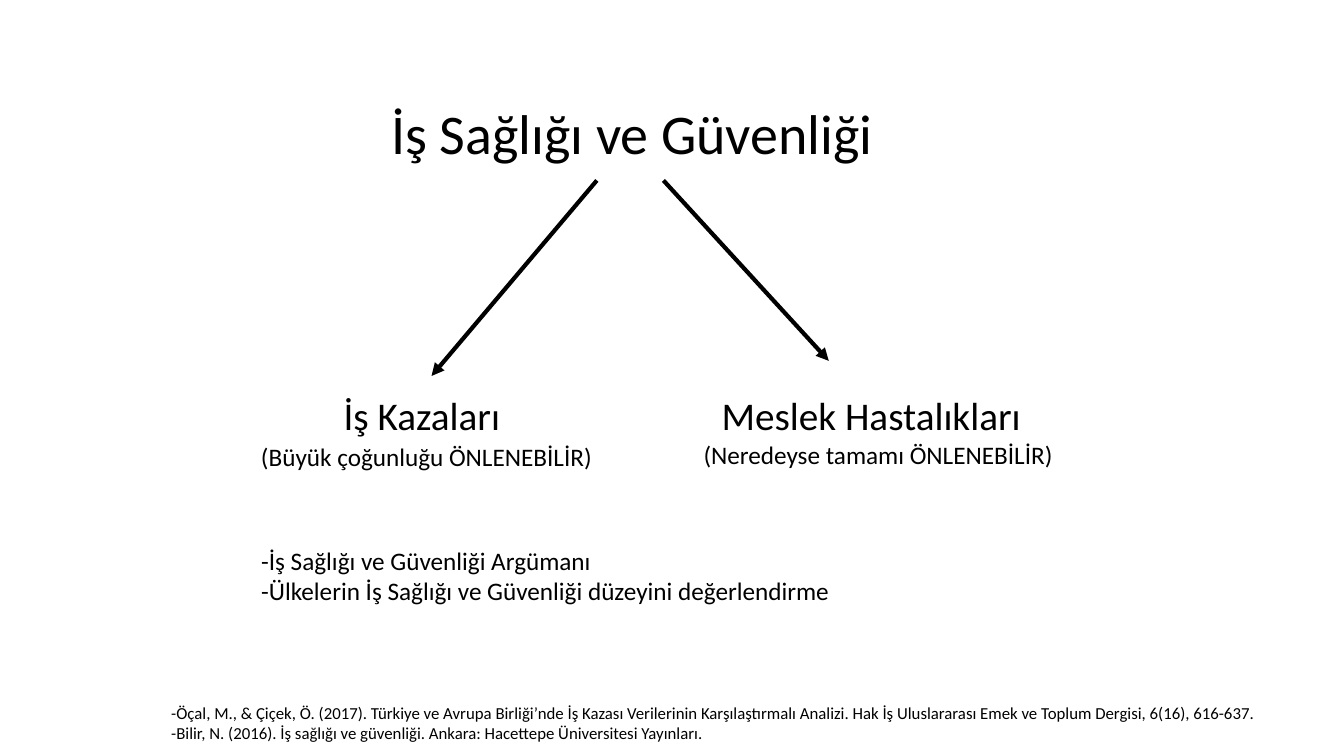
from dataclasses import dataclass

from lxml.etree import SubElement
from pptx import Presentation
from pptx.dml.color import RGBColor
from pptx.enum.shapes import MSO_CONNECTOR
from pptx.enum.text import MSO_ANCHOR, MSO_AUTO_SIZE, PP_ALIGN
from pptx.oxml.ns import qn
from pptx.util import Inches, Pt


@dataclass(frozen=True)
class Theme:
    font: str = "Calibri"
    ink: RGBColor = RGBColor(0, 0, 0)
    title: int = 40
    head: int = 28
    body: int = 18
    note: int = 12


theme = Theme()


def write(shape, box, size, lines):
    """Place a shape and fill it with left-aligned paragraphs."""
    shape.left, shape.top, shape.width, shape.height = map(Inches, box)
    frame = shape.text_frame
    frame.word_wrap = True
    frame.auto_size = MSO_AUTO_SIZE.NONE
    frame.vertical_anchor = MSO_ANCHOR.TOP
    for i, line in enumerate(lines):
        para = frame.add_paragraph() if i else frame.paragraphs[0]
        para.alignment = PP_ALIGN.LEFT
        para.space_before = Pt(0)
        run = para.add_run()
        run.text = line
        run.font.name = theme.font
        run.font.size = Pt(size)
        run.font.color.rgb = theme.ink


deck = Presentation()
deck.slide_width, deck.slide_height = Inches(13.33), Inches(7.5)
slide = deck.slides.add_slide(deck.slide_layouts[1])
shapes = slide.shapes

# Title
write(shapes.title, (3.78, 0.93, 8.89, 0.78), theme.title, ["İş Sağlığı ve Güvenliği"])

# Arrows from the title to the two branches
for start, end in [((5.92, 1.79), (4.28, 3.73)), ((6.58, 1.79), (8.22, 3.58))]:
    arrow = shapes.add_connector(MSO_CONNECTOR.STRAIGHT, *map(Inches, start + end))
    arrow.line.color.rgb = theme.ink
    arrow.line.width = Pt(3)
    SubElement(arrow.line._get_or_add_ln(), qn("a:tailEnd"), type="triangle")
    SubElement(arrow._element.spPr, qn("a:effectLst"))

# Branch headings, their remarks and the sources
labels = [
    ((3.31, 3.83, 2.5, 0.57), theme.head, ["İş Kazaları"]),
    ((7.06, 3.83, 3.6, 0.57), theme.head, ["Meslek Hastalıkları"]),
    ((2.49, 4.33, 3.95, 0.4), theme.body, ["(Büyük çoğunluğu ÖNLENEBİLİR)"]),
    ((6.88, 4.31, 3.95, 0.4), theme.body, ["(Neredeyse tamamı ÖNLENEBİLİR)"]),
    ((1.6, 6.92, 11.6, 0.5), theme.note, [
        "-Öçal, M., & Çiçek, Ö. (2017). Türkiye ve Avrupa Birliği’nde İş Kazası "
        "Verilerinin Karşılaştırmalı Analizi. Hak İş Uluslararası Emek ve Toplum "
        "Dergisi, 6(16), 616-637.",
        "-Bilir, N. (2016). İş sağlığı ve güvenliği. Ankara: Hacettepe Üniversitesi "
        "Yayınları.",
    ]),
]
for box, size, lines in labels:
    write(shapes.add_textbox(0, 0, 0, 0), box, size, lines)

# Points, with typed dashes in place of bullets
points = slide.placeholders[1]
write(points, (2.49, 5.36, 6.84, 0.71), theme.body, [
    "-İş Sağlığı ve Güvenliği Argümanı",
    "-Ülkelerin İş Sağlığı ve Güvenliği düzeyini değerlendirme",
])
for para in points.text_frame.paragraphs:
    props = para._p.get_or_add_pPr()
    props.set("marL", "0")
    props.set("indent", "0")
    SubElement(props, qn("a:buNone"))

deck.save("out.pptx")
